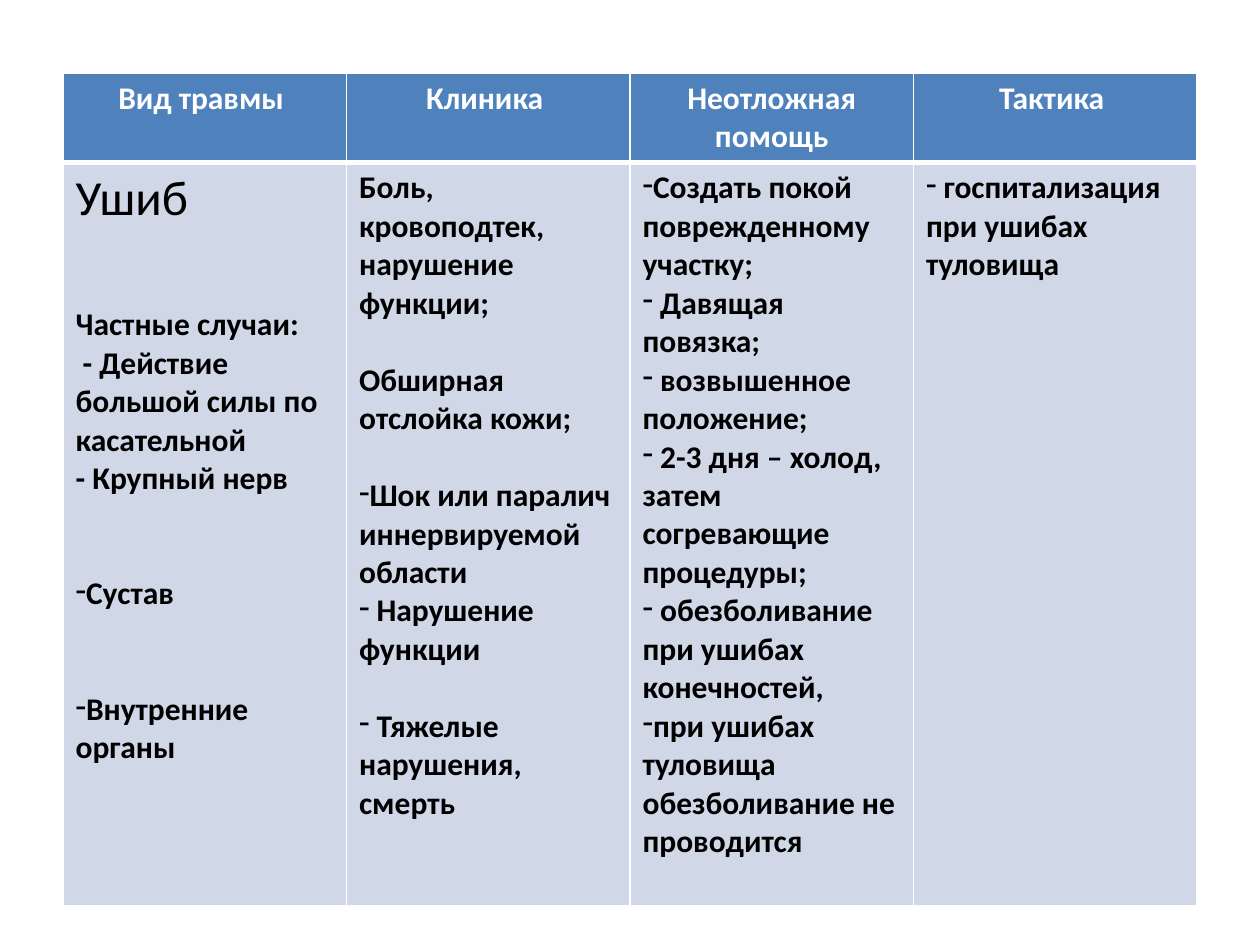
"""Build a slide with a table on bruises: signs, first aid and further care."""
from lxml.etree import SubElement
from pptx import Presentation
from pptx.dml.color import RGBColor
from pptx.enum.text import PP_ALIGN as Align
from pptx.oxml import parse_xml
from pptx.oxml.ns import nsdecls, qn
from pptx.util import Inches, Pt

COLORS = {"header": "4F81BD", "body": "D0D8E8", "line": "FFFFFF",
          "header_text": "FFFFFF", "body_text": "000000"}
LINE_HEIGHT = 22
HEADER_FONT = {"name": "Calibri", "size": Pt(18), "bold": True}
BODY_FONT = HEADER_FONT
TITLE_FONT = {**BODY_FONT, "size": Pt(28), "bold": False}
HEADER_BORDERS = {"L": 1, "R": 1, "T": 1, "B": 3}
BODY_BORDERS = {"L": 1, "R": 1, "T": 3, "B": 1}

HEADERS = ["Вид травмы ", "Клиника ", "Неотложная помощь", "Тактика "]
# Each entry: text, bulleted, free lines above, font
COLUMNS = [
    [("Ушиб", False, 0, TITLE_FONT),
     ("Частные случаи:", False, 2, BODY_FONT),
     (" - Действие большой силы по касательной", False, 0, BODY_FONT),
     ("- Крупный нерв", False, 0, BODY_FONT),
     ("Сустав", True, 2, BODY_FONT),
     ("Внутренние органы", True, 2, BODY_FONT)],
    [("Боль, кровоподтек, нарушение функции;", False, 0, BODY_FONT),
     ("Обширная отслойка кожи;", False, 1, BODY_FONT),
     ("Шок или паралич иннервируемой области", True, 1, BODY_FONT),
     (" Нарушение функции", True, 0, BODY_FONT),
     (" Тяжелые нарушения, смерть", True, 1, BODY_FONT)],
    [(text, True, 0, BODY_FONT) for text in (
        "Создать покой поврежденному участку;",
        " Давящая повязка;",
        " возвышенное положение;",
        " 2-3 дня – холод, затем согревающие процедуры;",
        " обезболивание при ушибах конечностей,",
        "при ушибах туловища обезболивание не проводится")],
    [(" госпитализация при ушибах туловища", True, 0, BODY_FONT)],
]


def style_cell(cell, color, borders):
    """Fill a cell and draw its borders."""
    cell.fill.solid()
    cell.fill.fore_color.rgb = RGBColor.from_string(COLORS[color])
    properties = cell._tc.get_or_add_tcPr()
    for index, (side, width) in enumerate(borders.items()):
        properties.insert(index, parse_xml(
            f'<a:ln{side} {nsdecls("a")} w="{Pt(width)}"><a:solidFill>'
            f'<a:srgbClr val="{COLORS["line"]}"/></a:solidFill></a:ln{side}>'))


def add_dash(paragraph):
    """Give a paragraph a dash bullet with no indent."""
    properties = paragraph._p.get_or_add_pPr()
    properties.set("marL", "0")
    properties.set("indent", "0")
    SubElement(properties, qn("a:buFontTx"))
    SubElement(properties, qn("a:buChar")).set("char", "-")


def write_text(paragraph, text, font_values, color):
    """Add one formatted run to a paragraph."""
    run = paragraph.add_run()
    run.text = text
    for name, value in font_values.items():
        setattr(run.font, name, value)
    run.font.color.rgb = RGBColor.from_string(COLORS[color])


def fill_header(cell, text):
    """Write a centred column heading."""
    style_cell(cell, "header", HEADER_BORDERS)
    paragraph = cell.text_frame.paragraphs[0]
    paragraph.alignment = Align.CENTER
    write_text(paragraph, text, HEADER_FONT, "header_text")


def fill_body(cell, entries):
    """Write the paragraphs of a body cell."""
    style_cell(cell, "body", BODY_BORDERS)
    frame = cell.text_frame
    for index, (text, bulleted, free_lines, font_values) in enumerate(entries):
        paragraph = frame.add_paragraph() if index else frame.paragraphs[0]
        paragraph.space_before = Pt(free_lines * LINE_HEIGHT)
        if bulleted:
            add_dash(paragraph)
        write_text(paragraph, text, font_values, "body_text")


def add_injury_table(slide):
    """Add the table with a heading and a body cell per column."""
    table = slide.shapes.add_table(2, len(HEADERS), Inches(0.5), Inches(0.58),
                                   Inches(9), Inches(6.6)).table
    for row, height in zip(table.rows, (0.7, 5.9)):
        row.height = Inches(height)
    for index, (header, entries) in enumerate(zip(HEADERS, COLUMNS)):
        table.columns[index].width = Inches(9 / len(HEADERS))
        fill_header(table.cell(0, index), header)
        fill_body(table.cell(1, index), entries)


def main():
    """Create and save the presentation."""
    presentation = Presentation()
    presentation.slide_width = Inches(10)
    presentation.slide_height = Inches(7.5)
    slide = presentation.slides.add_slide(presentation.slide_layouts[6])
    add_injury_table(slide)
    presentation.save("out.pptx")


if __name__ == "__main__":
    main()
